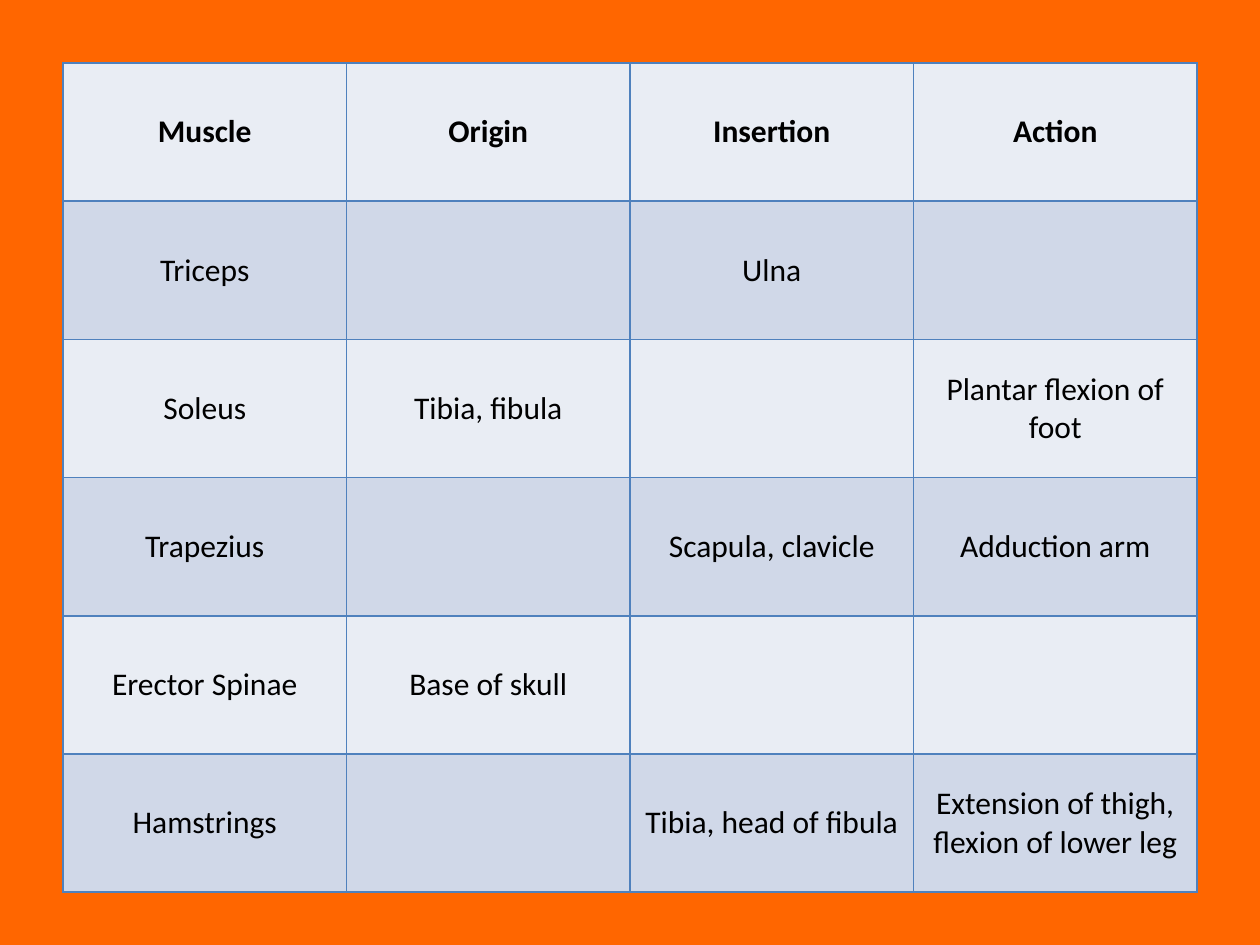
from pptx import Presentation
from pptx.dml.color import RGBColor
from pptx.enum.text import MSO_ANCHOR, PP_ALIGN
from pptx.oxml import parse_xml
from pptx.oxml.ns import nsdecls
from pptx.util import Pt

ORANGE = RGBColor(0xFF, 0x66, 0x00)
BLUE = RGBColor(0x4F, 0x81, 0xBD)
BLACK = RGBColor(0, 0, 0)
BANDS = RGBColor(0xE9, 0xED, 0xF4), RGBColor(0xD0, 0xD8, 0xE8)

MUSCLES = [
    ("Muscle", "Origin", "Insertion", "Action"),
    ("Triceps", "", "Ulna", ""),
    ("Soleus", "Tibia, fibula", "", "Plantar flexion of foot"),
    ("Trapezius", "", "Scapula, clavicle", "Adduction arm"),
    ("Erector Spinae", "Base of skull", "", ""),
    ("Hamstrings", "", "Tibia, head of fibula",
     "Extension of thigh, flexion of lower leg"),
]


def add_border(cell):
    props = cell._tc.get_or_add_tcPr()
    for spot, side in enumerate("LRTB"):
        props.insert(spot, parse_xml(
            f'<a:ln{side} {nsdecls("a")} w="{Pt(1)}"><a:solidFill>'
            f'<a:srgbClr val="{BLUE}"/></a:solidFill></a:ln{side}>'))


def fill_cell(cell, text, band, bold):
    cell.fill.solid()
    cell.fill.fore_color.rgb = band
    cell.vertical_anchor = MSO_ANCHOR.MIDDLE
    cell.text = text
    line = cell.text_frame.paragraphs[0]
    line.alignment = PP_ALIGN.CENTER
    font = line.font
    font.name, font.size, font.bold = "Calibri", Pt(18), bold
    font.color.rgb = BLACK
    add_border(cell)


def add_grid(slide, left, top, width, height):
    table = slide.shapes.add_table(
        len(MUSCLES), len(MUSCLES[0]),
        Pt(left), Pt(top), Pt(width), Pt(height)).table
    table.first_row = False
    table.horz_banding = False
    for r, row in enumerate(MUSCLES):
        for c, text in enumerate(row):
            fill_cell(table.cell(r, c), text, BANDS[r % 2], r == 0)


def main():
    deck = Presentation()
    deck.slide_width, deck.slide_height = Pt(720), Pt(540)
    slide = deck.slides.add_slide(deck.slide_layouts[6])
    back = slide.background.fill
    back.solid()
    back.fore_color.rgb = ORANGE
    add_grid(slide, 36, 36, 648, 474)
    deck.save("out.pptx")


if __name__ == "__main__":
    main()
